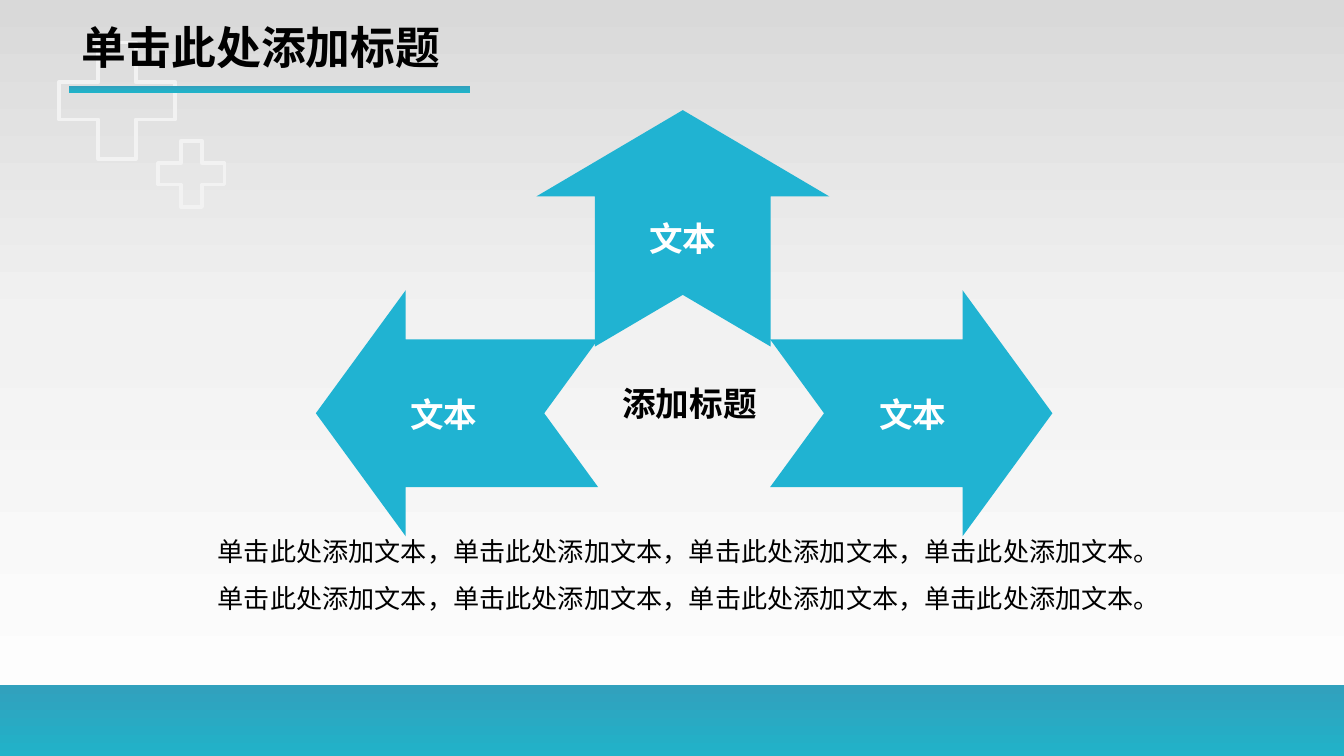
from copy import deepcopy

from lxml import etree
from pptx import Presentation
from pptx.dml.color import RGBColor
from pptx.enum.shapes import MSO_SHAPE
from pptx.enum.text import MSO_ANCHOR, MSO_AUTO_SIZE, PP_ALIGN
from pptx.oxml.ns import qn
from pptx.util import Pt

RECT, PLUS = MSO_SHAPE.RECTANGLE, MSO_SHAPE.MATH_PLUS
NOTCHED_ARROW = MSO_SHAPE.NOTCHED_RIGHT_ARROW
LEFT, CENTER = PP_ALIGN.LEFT, PP_ALIGN.CENTER
MIDDLE = MSO_ANCHOR.MIDDLE
FIXED, GROW = MSO_AUTO_SIZE.NONE, MSO_AUTO_SIZE.SHAPE_TO_FIT_TEXT
CJK = "Noto Sans CJK SC"
BLACK, WHITE, TEAL = "000000", "FFFFFF", "20B3D2"
BACKDROP = [(0, "D9D9D9"), (0.43, "F2F2F2"), (1, WHITE)]
BAND = [(0, "31A1BD"), (1, "20B3C9")]


def color(hex_code):
    return RGBColor.from_string(hex_code)


def points(box):
    return [Pt(v) for v in box]


def add_shape(shapes, kind, box):
    sp = shapes.add_shape(kind, *points(box))
    sp.shadow.inherit = False
    sp.line.fill.background()
    return sp


def add_gradient_rect(shapes, box, stops):
    """Rectangle shaded from top to bottom through the given stops."""
    sp = add_shape(shapes, RECT, box)
    sp.fill.gradient()
    sp.fill.gradient_angle = 270
    stop_list = sp._element.spPr.find(".//" + qn("a:gsLst"))
    while len(stop_list) < len(stops):
        stop_list.append(deepcopy(stop_list[-1]))
    for stop, (position, hex_code) in zip(sp.fill.gradient_stops, stops):
        stop.position = position
        stop.color.rgb = color(hex_code)


def add_run(p, text, size, hex_code, font=CJK, bold=False):
    r = p.add_run()
    r.text = text
    r.font.size = Pt(size)
    r.font.bold = bold
    r.font.name = font
    r.font.color.rgb = color(hex_code)
    etree.SubElement(r._r.get_or_add_rPr(), qn("a:ea"), typeface=CJK)


def add_text_frame(shapes, box):
    tf = shapes.add_textbox(*points(box)).text_frame
    tf.word_wrap = True
    tf.auto_size = GROW
    return tf


def add_label(shapes, box, text, hex_code):
    p = add_text_frame(shapes, box).paragraphs[0]
    p.alignment = CENTER
    add_run(p, text, 18, hex_code, bold=True)


def add_backdrop(s, box):
    left, top, width, height = box
    add_gradient_rect(s.shapes, box, BACKDROP)
    for dx, dy, size in [(20.2, 11.5, 85), (78.5, 69.1, 48.2)]:
        sp = add_shape(s.shapes, PLUS, (left + dx, top + dy, size, size))
        sp.fill.background()
        sp.line.color.rgb = color("F2F2F2")
        sp.line.width = Pt(2)
    band_height = 39.6
    add_gradient_rect(
        s.shapes, (left, top + height - band_height, width, band_height), BAND)


def add_title(s, box, text):
    left, top, width, height = box
    add_gradient_rect(s.shapes, (left, top + 38.9, 215.3, 3.6), BAND)
    title = s.shapes.title
    title.left, title.top, title.width, title.height = points(box)
    s.shapes._spTree.append(title._element)  # in front of the backdrop
    tf = title.text_frame
    tf.auto_size = FIXED
    tf.vertical_anchor = MIDDLE
    p = tf.paragraphs[0]
    p.alignment = LEFT
    add_run(p, text, 24, BLACK, font="DejaVu Sans", bold=True)


def add_arrow(s, box, rotation, label_offset, text):
    left, top, width, height = box
    dx, dy = label_offset
    group = s.shapes.add_group_shape()
    sp = add_shape(group.shapes, NOTCHED_ARROW, box)
    sp.adjustments[0], sp.adjustments[1] = 0.6, 0.365
    sp.rotation = rotation
    sp.fill.solid()
    sp.fill.fore_color.rgb = color(TEAL)
    add_label(group.shapes, (left + dx, top + dy, 75, 29), text, WHITE)


def add_arrow_diagram(s, box):
    """Three arrows pointing right, up and left around a central heading."""
    left, top, width, height = box
    side_w, side_h = 151.2, 131.8
    side_top = top + height - side_h
    add_label(s.shapes, (left + 144, side_top + 46.1, 112.3, 29),
              "添加标题", BLACK)
    add_arrow(s, (left + width - side_w, side_top, side_w, side_h), 0,
              (38.9, 51.8), "文本")
    up_w, up_h = 126.7, 157
    add_arrow(s, (left + (width - up_w) / 2 - 0.7, top - (up_h - up_w) / 2,
                  up_w, up_h), 270, (25.9, 69.1), "文本")
    add_arrow(s, (left, side_top, side_w, side_h), 180, (31, 51.8), "文本")


def add_description(s, box, lines):
    tf = add_text_frame(s.shapes, box)
    for i, line in enumerate(lines):
        p = tf.add_paragraph() if i else tf.paragraphs[0]
        p.alignment = CENTER
        p.line_spacing = 1.5
        properties = p._p.get_or_add_pPr()
        properties.set("marL", "0")
        properties.set("indent", str(Pt(-7.2)))
        add_run(p, line, 14, BLACK, font="Arial")


def main():
    prs = Presentation()
    prs.slide_width, prs.slide_height = Pt(720), Pt(405)
    s = prs.slides.add_slide(prs.slide_layouts[5])
    add_backdrop(s, (0, 0, 720, 406.8))
    add_title(s, (36.7, 7.2, 334.8, 36), "单击此处添加标题")
    add_arrow_diagram(s, (169.2, 59, 394.6, 228.3))
    sentence = "，".join(["单击此处添加文本"] * 4) + "。"
    add_description(s, (105.1, 275, 528.5, 58.3), [sentence] * 2)
    prs.save("out.pptx")


if __name__ == "__main__":
    main()
